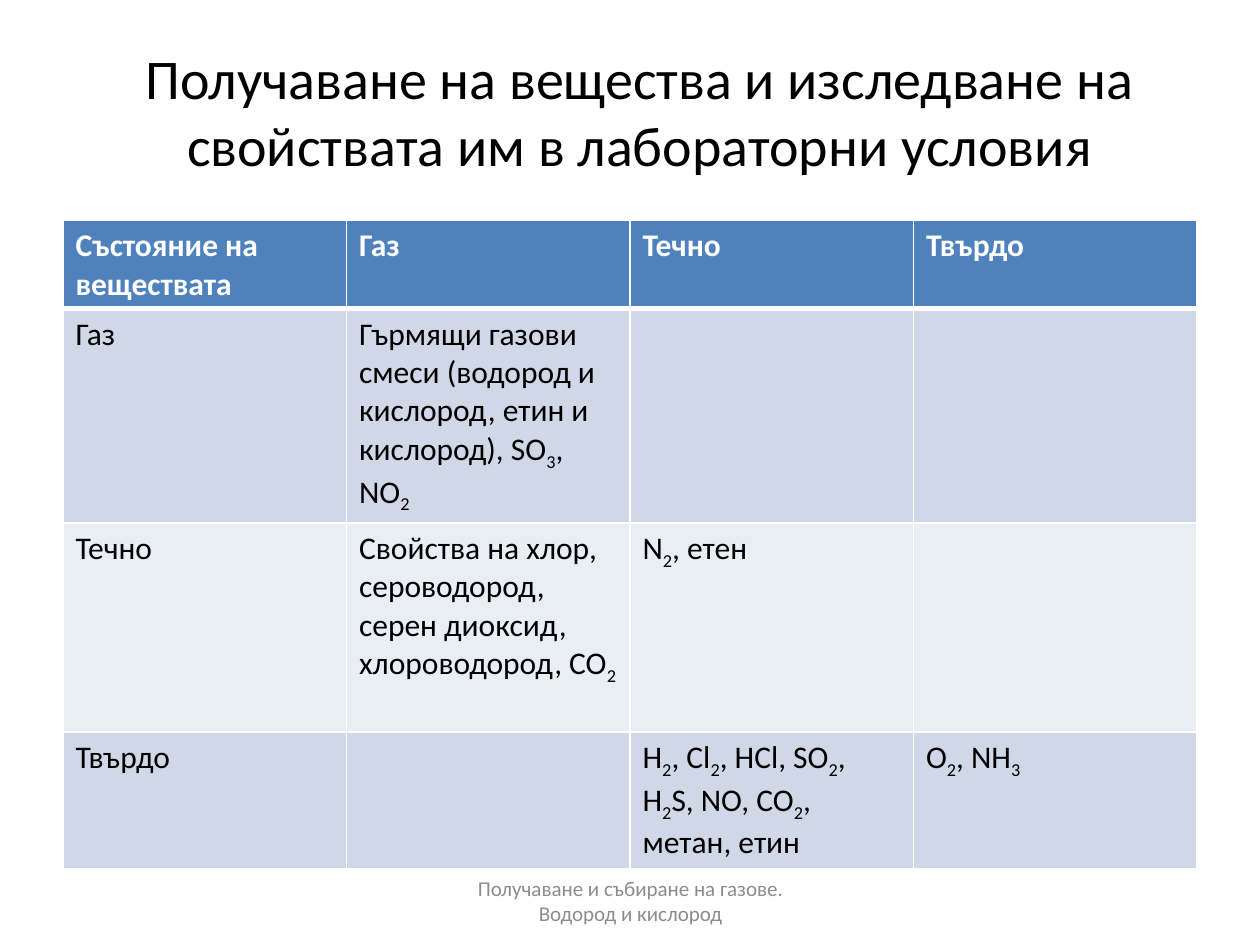
from dataclasses import dataclass
from itertools import groupby

from lxml import etree
from pptx import Presentation
from pptx.dml.color import RGBColor
from pptx.enum import text as t
from pptx.oxml import ns
from pptx.util import Inches, Pt


@dataclass(frozen=True)
class Theme:
    font: str = "Calibri"
    ink: str = "000000"
    white: str = "FFFFFF"
    muted: str = "8C8C8C"
    header: str = "4F81BD"
    bands: tuple = ("D0D8E8", "E9EDF4")
    title_size: int = 32
    table_size: int = 18
    footer_size: int = 12
    rule: int = 1
    header_rule: int = 3


THEME = Theme()

TITLE = "Получаване на вещества и изследване на свойствата им в лабораторни условия"
FOOTER = "Получаване и събиране на газове. Водород и кислород"
STATES = [
    ["Състояние на веществата", "Газ", "Течно", "Твърдо"],
    ["Газ", "Гърмящи газови смеси (водород и кислород, етин и кислород), SO3, NO2", "", ""],
    ["Течно", "Свойства на хлор, сероводород, серен диоксид, хлороводород, CO2",
     "N2, етен", ""],
    ["Твърдо", "", "H2, Cl2, HCl, SO2, H2S, NO, CO2, метан, етин", "O2, NH3"],
]
ROW_HEIGHTS = [0.7, 1.7, 1.66, 1.08]


def style_font(font, size, color, bold=False):
    for name, value in {"name": THEME.font, "size": Pt(size), "bold": bold}.items():
        setattr(font, name, value)
    font.color.rgb = RGBColor.from_string(color)


def add_caption(slide, box, wording, size, color):
    """Centred text in a box given as left, top, width, height in inches."""
    frame = slide.shapes.add_textbox(*map(Inches, box)).text_frame
    frame.word_wrap = True
    frame.vertical_anchor = t.MSO_ANCHOR.MIDDLE
    paragraph = frame.paragraphs[0]
    paragraph.alignment = t.PP_ALIGN.CENTER
    run = paragraph.add_run()
    run.text = wording
    style_font(run.font, size, color)


def write_formulas(paragraph, wording, color, bold):
    """Write the wording with every digit as a subscript."""
    style_font(paragraph.font, THEME.table_size, color, bold)
    for is_index, letters in groupby(wording, str.isdigit):
        run = paragraph.add_run()
        run.text = "".join(letters)
        style_font(run.font, THEME.table_size, color, bold)
        if is_index:
            run.font._element.set("baseline", "-25000")


def set_borders(cell, widths):
    properties = cell._tc.get_or_add_tcPr()
    for position, (side, width) in enumerate(widths.items()):
        line = etree.Element(ns.qn(f"a:ln{side}"), w=str(Pt(width)))
        fill = etree.SubElement(line, ns.qn("a:solidFill"))
        etree.SubElement(fill, ns.qn("a:srgbClr"), val=THEME.white)
        properties.insert(position, line)


def add_states_table(slide, box):
    left, top, width, height = map(Inches, box)
    table = slide.shapes.add_table(len(STATES), len(STATES[0]),
                                   left, top, width, height).table
    for row, row_height in zip(table.rows, ROW_HEIGHTS):
        row.height = Inches(row_height)
    for r, entries in enumerate(STATES):
        is_header = r == 0
        fill = THEME.header if is_header else THEME.bands[(r - 1) % 2]
        color = THEME.white if is_header else THEME.ink
        borders = {"L": THEME.rule, "R": THEME.rule,
                   "T": THEME.header_rule if r == 1 else THEME.rule,
                   "B": THEME.header_rule if is_header else THEME.rule}
        for c, wording in enumerate(entries):
            cell = table.cell(r, c)
            cell.fill.solid()
            cell.fill.fore_color.rgb = RGBColor.from_string(fill)
            set_borders(cell, borders)
            write_formulas(cell.text_frame.paragraphs[0], wording, color, is_header)


def main():
    deck = Presentation()
    deck.slide_width, deck.slide_height = Inches(10), Inches(7.5)
    slide = deck.slides.add_slide(deck.slide_layouts[6])
    add_caption(slide, (0.58, 0.25, 9, 1.25), TITLE, THEME.title_size, THEME.ink)
    add_states_table(slide, (0.5, 1.75, 9, sum(ROW_HEIGHTS)))
    add_caption(slide, (3.42, 6.95, 3.17, 0.4), FOOTER, THEME.footer_size, THEME.muted)
    deck.save("out.pptx")


if __name__ == "__main__":
    main()
